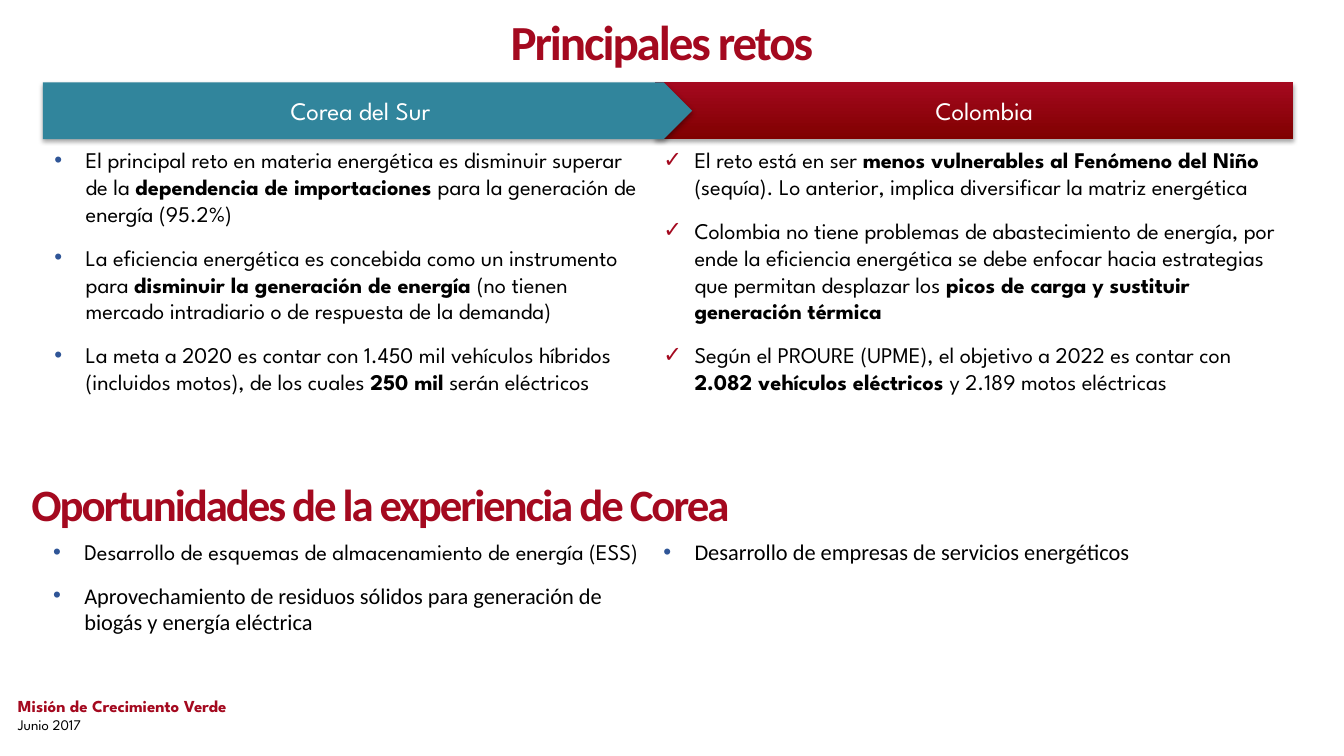
from dataclasses import dataclass

from lxml import etree
from pptx import Presentation
from pptx.dml.color import RGBColor
from pptx.enum.shapes import MSO_SHAPE
from pptx.enum.text import MSO_ANCHOR, MSO_AUTO_SIZE, PP_ALIGN
from pptx.oxml.ns import qn
from pptx.shapes.autoshape import Shape
from pptx.slide import Slide
from pptx.text.text import TextFrame, _Paragraph, _Run
from pptx.util import Inches, Pt

TOP, MIDDLE = MSO_ANCHOR.TOP, MSO_ANCHOR.MIDDLE
LEFT, CENTER = PP_ALIGN.LEFT, PP_ALIGN.CENTER
FIXED = MSO_AUTO_SIZE.NONE
ARROW = MSO_SHAPE.PENTAGON

WIDE, HIGH = Inches(13.33), Inches(7.5)
SANS, HEAD = "League Spartan", "Calibri"
COLORS = {"red": "A4091F", "dark": "800000", "teal": "31859C",
          "blue": "2F5597", "black": "000000", "white": "FFFFFF"}

Box = tuple[float, float, float, float]  # percent of slide: left, top, width, height


@dataclass
class Item:
    text: str  # **bold** parts between double asterisks
    face: str = SANS


@dataclass
class Bullets:
    slot: int  # placeholder index
    box: Box
    items: list[Item]
    mark: str = "•"
    tint: str = "blue"


@dataclass
class Banner:
    text: str
    box: Box
    fills: list[str]
    point: float
    inset: float


BANNERS = [
    Banner("Colombia", (48.7, 10.9, 47.5, 7.5), ["red", "dark"], 0, 0.31),
    Banner("Corea del Sur", (3.2, 10.9, 48.3, 7.5), ["teal"], 0.5, 0.1),
]
LISTS = [
    Bullets(1, (3.3, 18.7, 45.4, 43), [
        Item("El principal reto en materia energética es disminuir superar de la "
             "**dependencia de importaciones **para la generación de energía (95.2%)"),
        Item("La eficiencia energética es concebida como un instrumento para "
             "**disminuir la generación de energía **(no tienen mercado intradiario "
             "o de respuesta de la demanda)"),
        Item("La meta a 2020 es contar con 1.450 mil vehículos híbridos (incluidos "
             "motos), de los cuales **250 mil** serán eléctricos"),
    ]),
    Bullets(2, (48.6, 18.7, 48.2, 43), [
        Item("El reto está en ser **menos vulnerables al Fenómeno del Niño **(sequía). "
             "Lo anterior, implica diversificar la matriz energética"),
        Item("Colombia no tiene problemas de abastecimiento de energía, por ende la "
             "eficiencia energética se debe enfocar hacia estrategias que permitan "
             "desplazar los **picos de carga y sustituir generación térmica**"),
        Item("Según el PROURE (UPME), el objetivo a 2022 es contar con "
             "**2.082 vehículos eléctricos **y 2.189 motos eléctricas"),
    ], "✓", "red"),
    Bullets(3, (3.2, 70.5, 45.4, 18), [
        Item("Desarrollo de esquemas de almacenamiento de energía (ESS)"),
        Item("Aprovechamiento de residuos sólidos para generación de biogás y "
             "energía eléctrica", HEAD),
    ]),
    Bullets(4, (48.6, 70.5, 45.4, 18), [
        Item("Desarrollo de empresas de servicios energéticos", HEAD),
    ]),
]


def rgb(name: str) -> RGBColor:
    return RGBColor.from_string(COLORS[name])


def span(box: Box) -> list[int]:
    """Turn shares of the slide into lengths."""
    return [round(part * side / 100) for part, side in zip(box, (WIDE, HIGH) * 2)]


def place(shape: Shape, box: Box) -> None:
    for name, value in zip(("left", "top", "width", "height"), span(box)):
        setattr(shape, name, value)


def setup(frame: TextFrame, anchor: MSO_ANCHOR = TOP, **more: int) -> None:
    look = {"word_wrap": True, "auto_size": FIXED, "vertical_anchor": anchor}
    for name, value in (look | more).items():
        setattr(frame, name, value)


def write(par: _Paragraph, text: str, size: float, face: str, color: str,
          bold: bool = False) -> _Run:
    run = par.add_run()
    run.text = text
    look = {"size": Pt(size), "name": face, "bold": bold}
    for name, value in look.items():
        setattr(run.font, name, value)
    run.font.color.rgb = rgb(color)
    return run


def add_head(shape: Shape, text: str, size: float, align: PP_ALIGN) -> None:
    setup(shape.text_frame)
    par = shape.text_frame.paragraphs[0]
    par.alignment = align
    run = write(par, text, size, HEAD, "red", True)
    run._r.get_or_add_rPr().set("spc", "-150")


def add_shade(shape: Shape) -> None:
    """Give the shape a soft shadow below it."""
    shape.shadow.inherit = False
    effects = shape._element.spPr.find(qn("a:effectLst"))
    shade = etree.SubElement(effects, qn("a:outerShdw"), blurRad=str(Pt(3.1)),
                             dist=str(Pt(1.8)), dir="5400000", rotWithShape="0")
    color = etree.SubElement(shade, qn("a:srgbClr"), val=COLORS["black"])
    etree.SubElement(color, qn("a:alpha"), val="35000")


def add_banner(slide: Slide, banner: Banner) -> None:
    shape = slide.shapes.add_shape(ARROW, *span(banner.box))
    shape.adjustments[0] = banner.point
    shape.line.fill.background()
    if len(banner.fills) > 1:
        shape.fill.gradient()
        shape.fill.gradient_angle = 270
        for stop, name in zip(shape.fill.gradient_stops, banner.fills):
            stop.color.rgb = rgb(name)
    else:
        shape.fill.solid()
        shape.fill.fore_color.rgb = rgb(banner.fills[0])
    add_shade(shape)
    setup(shape.text_frame, MIDDLE, margin_left=Inches(banner.inset))
    par = shape.text_frame.paragraphs[0]
    par.alignment = CENTER
    write(par, banner.text, 18, SANS, "white")


def add_mark(par: _Paragraph, mark: str, tint: str) -> None:
    props = par._p.get_or_add_pPr()
    for name, sign in (("marL", 1), ("indent", -1)):
        props.set(name, str(sign * Inches(0.31)))
    color = etree.SubElement(props, qn("a:buClr"))
    etree.SubElement(color, qn("a:srgbClr"), val=COLORS[tint])
    etree.SubElement(props, qn("a:buFont"), typeface="Arial")
    etree.SubElement(props, qn("a:buChar"), char=mark)


def add_list(slide: Slide, group: Bullets) -> None:
    shape = slide.placeholders[group.slot]
    place(shape, group.box)
    frame = shape.text_frame
    setup(frame)
    for row, item in enumerate(group.items):
        par = frame.add_paragraph() if row else frame.paragraphs[0]
        add_mark(par, group.mark, group.tint)
        look = {"alignment": LEFT, "line_spacing": 1.0,
                "space_before": Pt(0), "space_after": Pt(12)}
        for name, value in look.items():
            setattr(par, name, value)
        for turn, part in enumerate(item.text.split("**")):
            if part:
                write(par, part, 16, item.face, "black", turn % 2 == 1)


def add_foot(slide: Slide) -> None:
    frame = slide.shapes.add_textbox(*span((0.6, 90.7, 68.6, 7.3))).text_frame
    sides = ("left", "top", "right", "bottom")
    setup(frame, **{f"margin_{side}": Inches(0.1) for side in sides})
    write(frame.paragraphs[0], "Misión de Crecimiento Verde", 12, SANS, "red", True)
    write(frame.add_paragraph(), "Junio 2017", 10.5, SANS, "black")


def main() -> None:
    deck = Presentation()
    deck.slide_width, deck.slide_height = WIDE, HIGH
    slide = deck.slides.add_slide(deck.slide_layouts.get_by_name("Comparison"))
    add_foot(slide)
    title = slide.shapes.title
    place(title, (1.6, 0.9, 95.3, 8.1))
    add_head(title, "Principales retos", 35, CENTER)
    for banner in BANNERS:
        add_banner(slide, banner)
    for group in LISTS:
        add_list(slide, group)
    lower = slide.shapes.add_textbox(*span((1.6, 62.4, 95.3, 8.1)))
    add_head(lower, "Oportunidades de la experiencia de Corea", 32, LEFT)
    deck.save("out.pptx")


if __name__ == "__main__":
    main()
